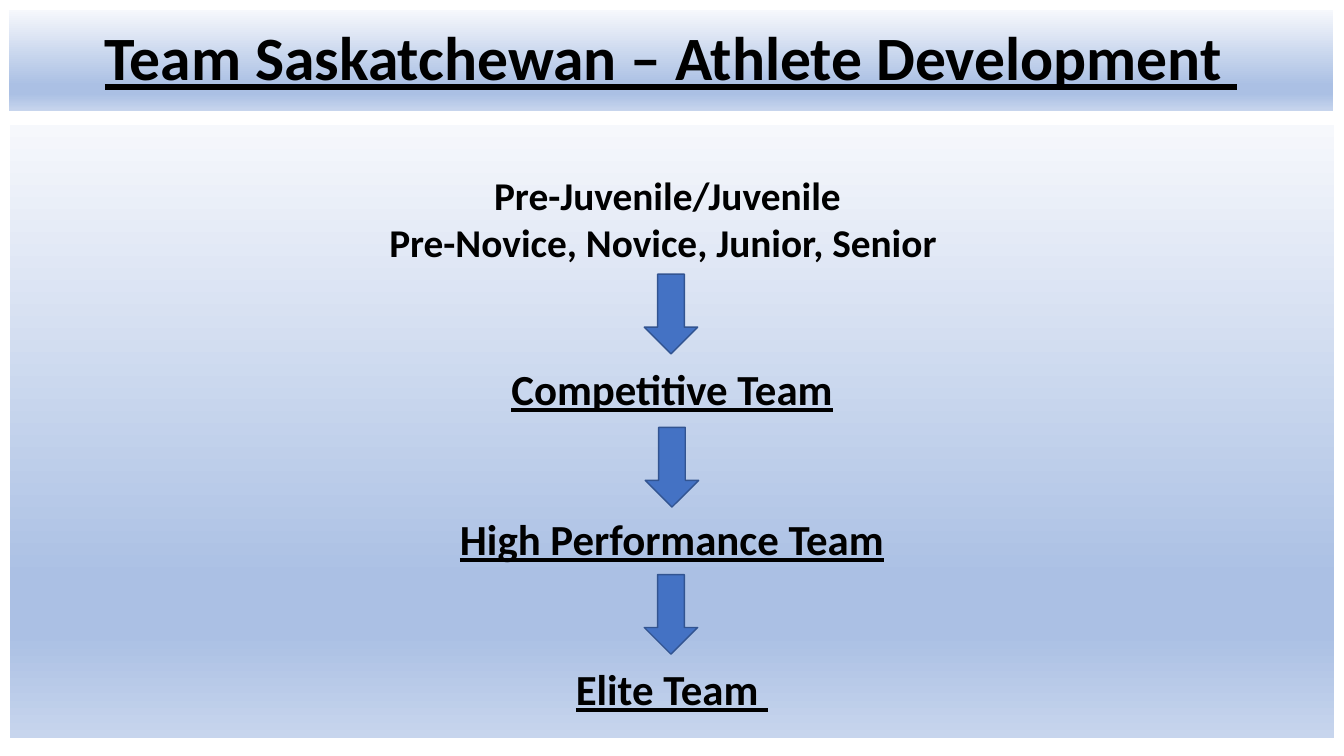
from copy import deepcopy

from pptx import Presentation
from pptx.dml.color import RGBColor
from pptx.enum.shapes import MSO_SHAPE
from pptx.enum.text import MSO_ANCHOR, MSO_AUTO_SIZE, PP_ALIGN
from pptx.util import Inches, Pt

GRADIENT = [(0, "F6F8FC"), (0.74, "ABC0E4"), (0.83, "ABC0E4"), (1, "C7D5ED")]
STAGES = [
    ("Pre-Juvenile/Juvenile ", 28.1, False, 0),
    ("Pre-Novice, Novice, Junior, Senior  ", 28.1, False, 10),
    ("Competitive Team", 30.6, True, 80),
    ("High Performance Team", 30.6, True, 81.6),
    ("Elite Team ", 30.6, True, 81.6),
]
ARROWS = [(6.39, 2.72), (6.4, 4.24), (6.39, 5.7)]


def color(value):
    return RGBColor.from_string(value)


def fill_gradient(shape):
    fill = shape.fill
    fill.gradient()
    fill.gradient_angle = 270
    stop_list = fill._fill._gradFill.gsLst
    while len(stop_list) < len(GRADIENT):
        stop_list.append(deepcopy(stop_list[0]))
    for stop, (position, value) in zip(fill.gradient_stops, GRADIENT):
        stop.position = position
        stop.color.rgb = color(value)


def write_line(paragraph, text, size, underline, spacing, before=0):
    paragraph.alignment = PP_ALIGN.CENTER
    paragraph.line_spacing = spacing
    paragraph.space_before = Pt(before)
    run = paragraph.add_run()
    run.text = text
    font = run.font
    font.name = "Calibri"
    font.size = Pt(size)
    font.bold = True
    font.underline = underline
    font.color.rgb = color("000000")


def prepare_frame(shape, anchor):
    frame = shape.text_frame
    frame.word_wrap = True
    frame.auto_size = MSO_AUTO_SIZE.NONE
    frame.vertical_anchor = anchor
    return frame


def add_heading(slide):
    heading = slide.shapes.title
    heading.left, heading.top = Inches(0.09), Inches(0.1)
    heading.width, heading.height = Inches(13.13), Inches(1)
    fill_gradient(heading)
    frame = prepare_frame(heading, MSO_ANCHOR.MIDDLE)
    write_line(frame.paragraphs[0], "Team Saskatchewan – Athlete Development ",
               44, True, 0.9)


def add_pathway(slide):
    pathway = slide.shapes.add_shape(
        MSO_SHAPE.RECTANGLE, Inches(0.1), Inches(1.24), Inches(13.13), Inches(6.08))
    pathway.shadow.inherit = False
    pathway.line.fill.background()
    fill_gradient(pathway)
    frame = prepare_frame(pathway, MSO_ANCHOR.TOP)
    frame.margin_top = Inches(0.59)
    for index, (text, size, underline, before) in enumerate(STAGES):
        paragraph = frame.add_paragraph() if index else frame.paragraphs[0]
        write_line(paragraph, text, size, underline, 0.7, before)


def add_arrow(slide, left, top):
    arrow = slide.shapes.add_shape(
        MSO_SHAPE.DOWN_ARROW, Inches(left), Inches(top), Inches(0.53), Inches(0.79))
    arrow.shadow.inherit = False
    arrow.fill.solid()
    arrow.fill.fore_color.rgb = color("4472C4")
    arrow.line.color.rgb = color("325491")
    arrow.line.width = Pt(1)


def main():
    deck = Presentation()
    deck.slide_width, deck.slide_height = Inches(13.33), Inches(7.5)
    slide = deck.slides.add_slide(deck.slide_layouts[5])
    add_heading(slide)
    add_pathway(slide)
    for left, top in ARROWS:
        add_arrow(slide, left, top)
    deck.save("out.pptx")


if __name__ == "__main__":
    main()
